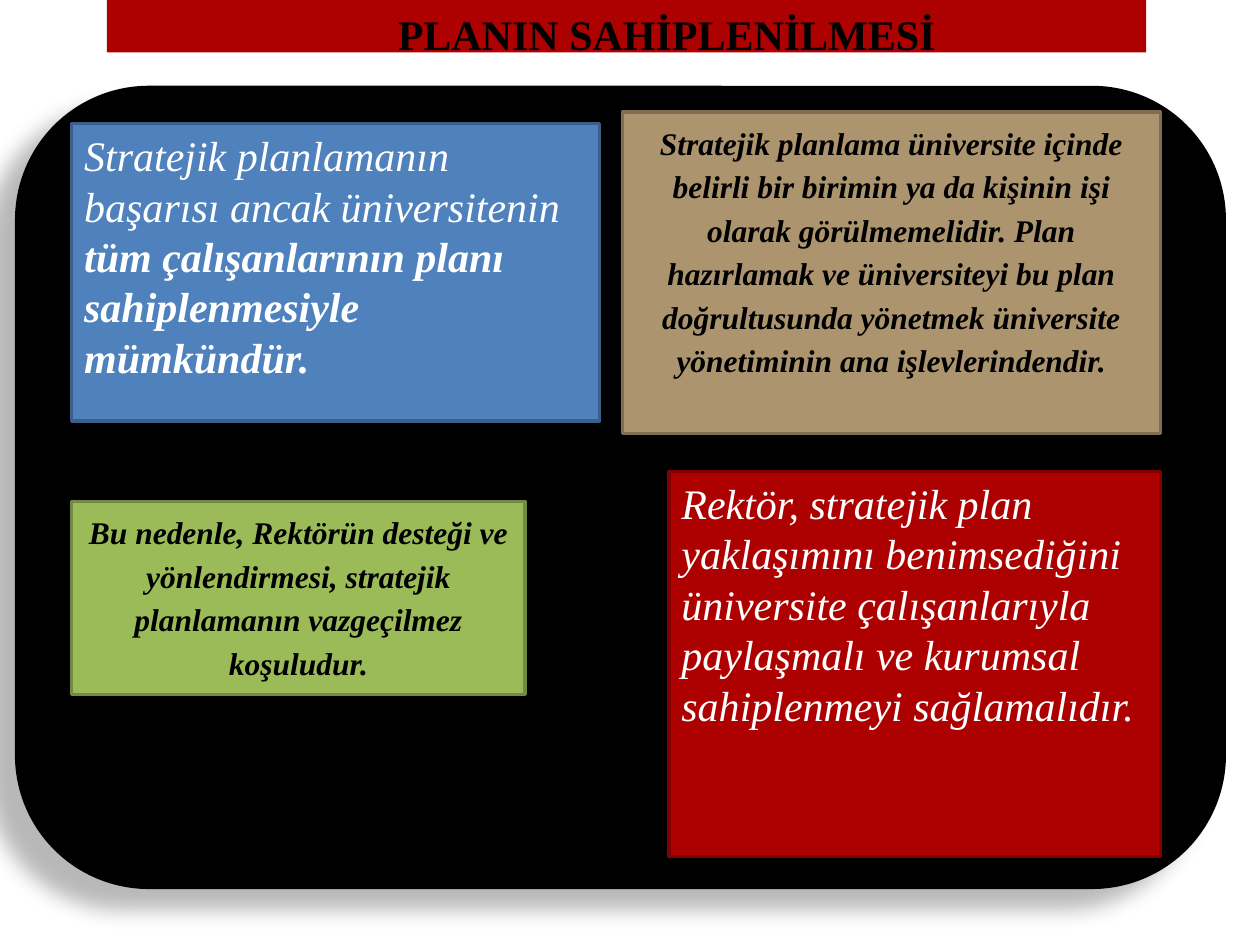
import dataclasses

import lxml.etree
import pptx
import pptx.dml.color
import pptx.enum.shapes
import pptx.enum.text
import pptx.oxml.ns
import pptx.util

Pt = pptx.util.Pt
SHAPE = pptx.enum.shapes.MSO_SHAPE
ALIGN = pptx.enum.text.PP_ALIGN
ANCHOR = pptx.enum.text.MSO_ANCHOR


@dataclasses.dataclass(frozen=True)
class Theme:
    font: str = "Times New Roman"
    black: str = "000000"
    white: str = "FFFFFF"
    red: str = "AD0101"
    maroon: str = "800101"
    tan: str = "AC956E"
    brown: str = "7F6E51"
    green: str = "9BBB59"
    olive: str = "738A42"
    blue: str = "4F81BD"
    navy: str = "3A5F8C"
    large: int = 24
    small: int = 18


THEME = Theme()


def color(code):
    return pptx.dml.color.RGBColor.from_string(code)


def write(shape, *parts, size=THEME.large, ink=THEME.white, bold=False,
          slant=True, align=ALIGN.LEFT, space=1.0):
    frame = shape.text_frame
    frame.word_wrap = True
    frame.vertical_anchor = ANCHOR.TOP
    line = frame.paragraphs[0]
    line.alignment = align
    line.line_spacing = space
    for index, part in enumerate(parts):
        run = line.add_run()
        run.text = part
        font = run.font
        font.name = THEME.font
        font.size = Pt(size)
        font.bold = bold or index > 0
        font.italic = slant
        font.color.rgb = color(ink)


def place(shape, area):
    shape.left, shape.top, shape.width, shape.height = map(Pt, area)


def add_box(slide, area, fill, edge=None, weight=2, kind=SHAPE.RECTANGLE):
    box = slide.shapes.add_shape(kind, *map(Pt, area))
    box.shadow.inherit = False
    box.fill.solid()
    box.fill.fore_color.rgb = color(fill)
    if edge:
        box.line.color.rgb = color(edge)
        box.line.width = Pt(weight)
    else:
        box.line.fill.background()
    return box


def add_shade(box, blur, shift, angle, alpha):
    name = pptx.oxml.ns.qn
    effect = box.element.spPr.find(name("a:effectLst"))
    shade = lxml.etree.SubElement(
        effect, name("a:outerShdw"), blurRad=str(Pt(blur)),
        dist=str(Pt(shift)), dir=str(angle * 60000), algn="ctr", rotWithShape="0")
    tone = lxml.etree.SubElement(shade, name("a:srgbClr"), val=THEME.black)
    lxml.etree.SubElement(tone, name("a:alpha"), val=str(alpha * 1000))


def add_title(slide, text):
    title = slide.shapes.title
    place(title, (208, 1.5, 346, 36))
    write(title, text, ink=THEME.black, bold=True, slant=False,
          align=ALIGN.CENTER)
    band = add_box(slide, (61, 0, 594, 30), THEME.red)
    title.element.addprevious(band.element)


def main():
    deck = pptx.Presentation()
    deck.slide_width, deck.slide_height = Pt(720), Pt(540)
    slide = deck.slides.add_slide(deck.slide_layouts[5])
    add_title(slide, "PLANIN SAHİPLENİLMESİ")

    panel = add_box(slide, (8.6, 49, 692, 459), THEME.black,
                    kind=SHAPE.ROUNDED_RECTANGLE)
    add_shade(panel, blur=11.8, shift=19.7, angle=141, alpha=28)

    strong = dict(size=THEME.small, ink=THEME.black, bold=True,
                  align=ALIGN.CENTER, space=1.15)
    cards = [
        ((355.7, 64, 307.4, 183.6), THEME.tan, THEME.brown, 1.75, strong,
         ["Stratejik planlama üniversite içinde belirli bir birimin ya da "
          "kişinin işi olarak görülmemelidir. Plan hazırlamak ve üniversiteyi "
          "bu plan doğrultusunda yönetmek üniversite yönetiminin ana "
          "işlevlerindendir."]),
        ((382.3, 269.3, 280.8, 220.3), THEME.red, THEME.maroon, 1.75, {},
         ["Rektör, stratejik plan yaklaşımını benimsediğini üniversite "
          "çalışanlarıyla paylaşmalı ve kurumsal sahiplenmeyi "
          "sağlamalıdır."]),
        ((41, 286.6, 259.2, 110.2), THEME.green, THEME.olive, 2, strong,
         ["Bu nedenle, Rektörün desteği ve yönlendirmesi, stratejik "
          "planlamanın vazgeçilmez koşuludur."]),
        ((41, 70.6, 301.7, 169.9), THEME.blue, THEME.navy, 2, {},
         ["Stratejik planlamanın başarısı ancak üniversitenin ",
          "tüm çalışanlarının planı sahiplenmesiyle mümkündür."]),
    ]
    for area, fill, edge, weight, style, parts in cards:
        write(add_box(slide, area, fill, edge, weight), *parts, **style)

    deck.save("out.pptx")


if __name__ == "__main__":
    main()
